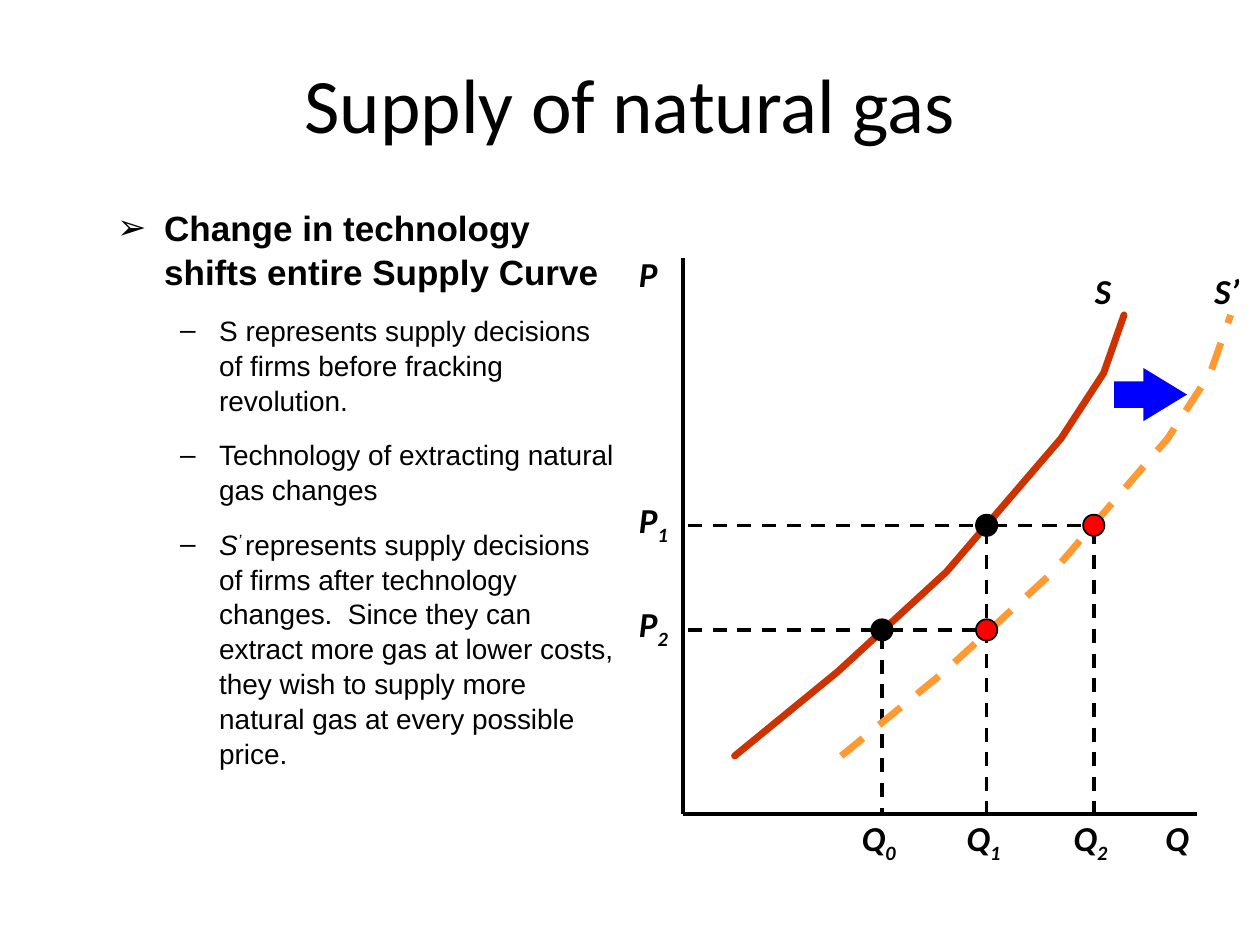
from lxml import etree
from pptx import Presentation
from pptx.dml.color import RGBColor
from pptx.enum.dml import MSO_LINE
from pptx.enum.shapes import MSO_CONNECTOR, MSO_SHAPE
from pptx.enum.text import MSO_ANCHOR, MSO_AUTO_SIZE, PP_ALIGN
from pptx.oxml.ns import qn
from pptx.util import Cm, Pt

DASH = MSO_LINE.DASH
STRAIGHT = MSO_CONNECTOR.STRAIGHT
OVAL, ARROW = MSO_SHAPE.OVAL, MSO_SHAPE.RIGHT_ARROW
MIDDLE, CENTER = MSO_ANCHOR.MIDDLE, PP_ALIGN.CENTER
FIT = MSO_AUTO_SIZE.SHAPE_TO_FIT_TEXT

COLORS = {
    "ink": "000000",
    "old": "CC3300",
    "new": "FF9933",
    "dot": "FF0000",
    "shift": "0000FF",
}

HEAD = "Change in technology shifts entire Supply Curve"
POINTS = [
    [("S represents supply decisions of firms before fracking revolution.", {})],
    [("Technology of extracting natural gas changes", {})],
    [
        ("S", {"italic": True}),
        ("’ ", {"italic": True, "base": 30}),
        ("represents supply decisions of firms after technology changes.  "
         "Since they can extract more gas at lower costs, they wish to supply "
         "more natural gas at every possible price.", {}),
    ],
]

# Graph positions in cm, measured from the top of the price axis
COLS = [4.01, 6.12, 8.28]
ROWS = [5.38, 7.49]
CURVE = [(1.04, 10.03), (3.12, 8.33), (5.31, 6.32),
         (7.62, 3.63), (8.48, 2.31), (8.89, 1.14)]
SHIFT = 2.15


def color(name):
    return RGBColor.from_string(COLORS[name])


def write(par, text, size=20, font="Calibri", bold=False, italic=False, base=0):
    run = par.add_run()
    run.text = text
    face = run.font
    face.size, face.name = Pt(size), font
    face.bold, face.italic = bold, italic
    face.color.rgb = color("ink")
    if base:
        run._r.get_or_add_rPr().set("baseline", str(base * 1000))


def frame(slide, x, y, w, h, wrap=True):
    box = slide.shapes.add_textbox(Cm(x), Cm(y), Cm(w), Cm(h))
    box.text_frame.word_wrap = wrap
    return box.text_frame


def bullet(par, char, left, hang):
    props = par._p.get_or_add_pPr()
    props.set("marL", str(Cm(left)))
    props.set("indent", str(-Cm(hang)))
    etree.SubElement(props, qn("a:buFont")).set("typeface", "Arial")
    etree.SubElement(props, qn("a:buChar")).set("char", char)


def stroke(line, name, width, dash=None):
    line.color.rgb = color(name)
    line.width = Pt(width)
    if dash:
        line.dash_style = dash


def rule(slide, x1, y1, x2, y2, dash=None):
    line = slide.shapes.add_connector(STRAIGHT, Cm(x1), Cm(y1), Cm(x2), Cm(y2))
    stroke(line.line, "ink", 2, dash)
    etree.SubElement(line._element.spPr, qn("a:effectLst"))


def solid(slide, kind, x, y, w, h, fill):
    shape = slide.shapes.add_shape(kind, Cm(x), Cm(y), Cm(w), Cm(h))
    shape.shadow.inherit = False
    shape.fill.solid()
    shape.fill.fore_color.rgb = color(fill)
    return shape


def dot(slide, x, y, fill, size=0.43):
    shape = solid(slide, OVAL, x - size / 2, y - size / 2, size, size, fill)
    stroke(shape.line, "ink", 1)


def label(slide, x, y, w, text, sub=""):
    body = frame(slide, x, y, w, 1.09, wrap=False)
    body.auto_size = FIT
    par = body.paragraphs[0]
    write(par, text, bold=True, italic=True)
    if sub:
        write(par, sub, bold=True, italic=True, base=-25)


def curve(slide, points, name, dash=None):
    spots = [(Cm(x), Cm(y)) for x, y in points]
    build = slide.shapes.build_freeform(*spots[0])
    build.add_line_segments(spots[1:], close=False)
    shape = build.convert_to_shape()
    shape.shadow.inherit = False
    shape.fill.background()
    stroke(shape.line, name, 4, dash)
    if not dash:
        shape.line._get_or_add_ln().set("cap", "rnd")


def title(slide, x, y, w, h):
    body = frame(slide, x, y, w, h)
    body.vertical_anchor = MIDDLE
    par = body.paragraphs[0]
    par.alignment = CENTER
    write(par, "Supply of natural gas", size=44)


def notes(slide, x, y, w, h):
    """Place the bulleted text on the left."""
    body = frame(slide, x, y, w, h)
    head = body.paragraphs[0]
    head.line_spacing = 1.04
    bullet(head, "➢", 0.95, 0.95)
    write(head, HEAD, font="Arial", bold=True)
    for point in POINTS:
        par = body.add_paragraph()
        par.level = 1
        par.line_spacing = 1.04
        par.space_before = Pt(11.2)
        bullet(par, "–", 2.06, 0.79)
        for text, form in point:
            write(par, text, size=16, font="Arial", **form)


def graph(slide, x, y, w, h):
    """Place both supply curves, with their guides, on a pair of axes."""
    base = y + h
    cols = [x + c for c in COLS]
    rows = [y + r for r in ROWS]
    old = [(x + a, y + b) for a, b in CURVE]
    new = [(a + SHIFT, b) for a, b in old]

    rule(slide, x, y, x, base)
    rule(slide, x, base, x + w, base)
    curve(slide, old, "old")
    label(slide, x - 1.14, y - 0.25, 0.97, "P")
    label(slide, x + 9.47, base - 0.08, 1.04, "Q")
    label(slide, x + 8.05, y + 0.1, 0.97, "S")
    label(slide, x + 10.46, y + 0.1, 1.17, "S’")
    for i, row in enumerate(rows, 1):
        label(slide, x - 1.14, row - 0.67, 1.22, "P", str(i))
    for i, col in enumerate(cols):
        label(slide, col - 0.66, base - 0.08, 1.3, "Q", str(i))

    for col, row in zip(cols, (rows[1], rows[0], rows[0])):
        rule(slide, col, row + 0.1, col, base, DASH)
    for row, near, far in ((rows[0], cols[1], cols[2]),
                           (rows[1], cols[0], cols[1])):
        rule(slide, x + 0.1, row, near, row, DASH)
        rule(slide, near + 0.13, row, far - 0.1, row, DASH)
        dot(slide, near, row, "ink")

    curve(slide, new, "new", DASH)
    for col, row in zip(cols[1:], reversed(rows)):
        dot(slide, col, row, "dot")
    arrow = solid(slide, ARROW, x + 8.69, y + 2.21, 1.47, 1.07, "shift")
    arrow.line.fill.background()
    arrow.adjustments[0] = 0.5
    arrow.adjustments[1] = 0.82


def main():
    deck = Presentation()
    deck.slide_width, deck.slide_height = Cm(25.4), Cm(19.05)
    slide = deck.slides.add_slide(deck.slide_layouts[6])
    title(slide, 1.27, 0.76, 22.86, 2.62)
    notes(slide, 2.11, 4.01, 10.52, 12.73)
    graph(slide, 13.77, 5.21, 10.36, 11.2)
    deck.save("out.pptx")


if __name__ == "__main__":
    main()
